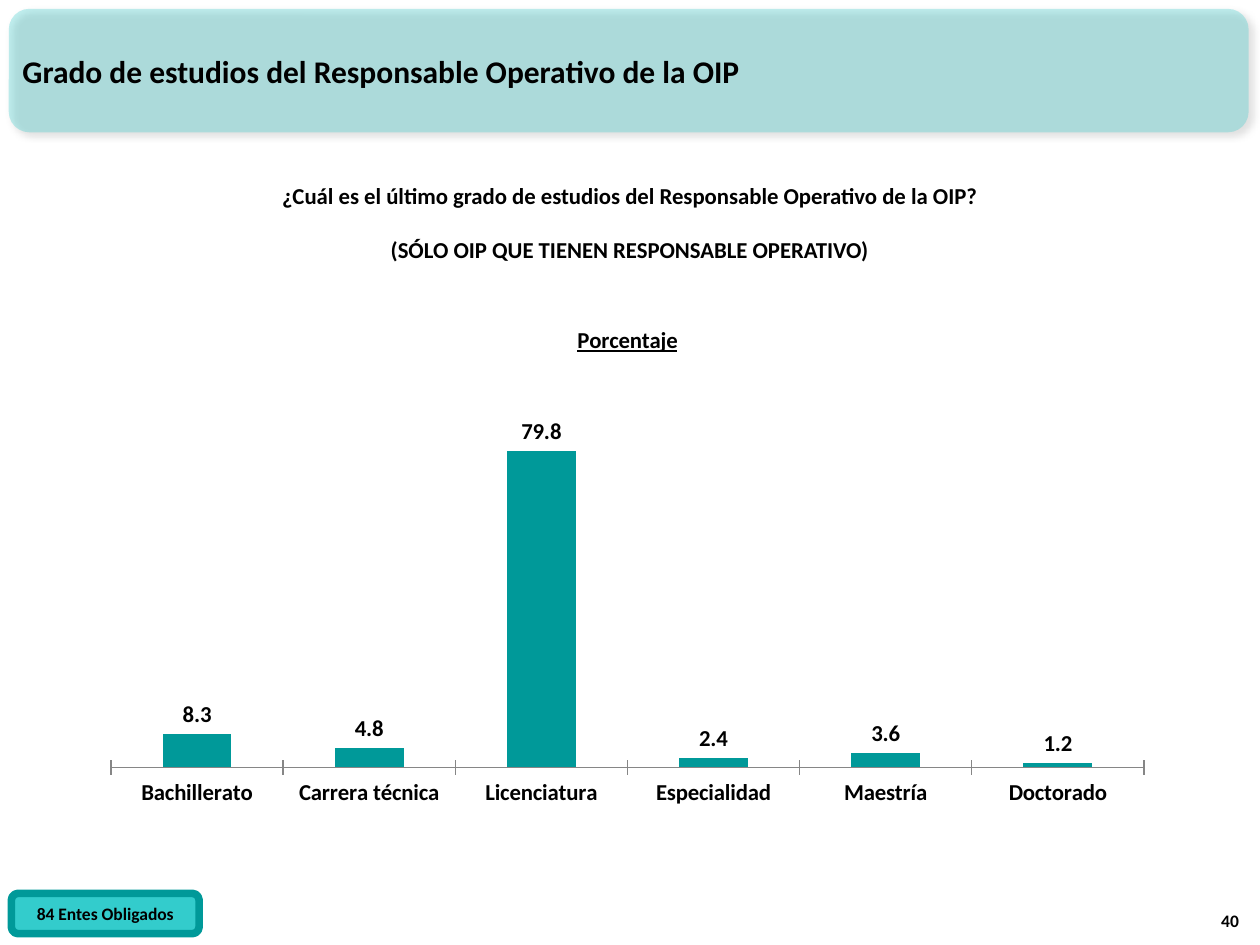
"""Builds the slide on the education level of the operative officers of the OIP."""
import lxml.etree
import pptx
import pptx.chart.data
import pptx.dml.color
import pptx.enum.chart
import pptx.enum.shapes
import pptx.enum.text
import pptx.oxml
import pptx.oxml.ns
import pptx.util

Inches = pptx.util.Inches
Pt = pptx.util.Pt
qn = pptx.oxml.ns.qn
Align = pptx.enum.text.PP_ALIGN
Anchor = pptx.enum.text.MSO_ANCHOR

TITLE = "Grado de estudios del Responsable Operativo de la OIP"
QUESTION = [
    "¿Cuál es el último grado de estudios del Responsable Operativo de la OIP?",
    "(SÓLO OIP QUE TIENEN RESPONSABLE OPERATIVO)",
]
MEASURE = "Porcentaje"
DEGREES = {
    "Bachillerato": 8.3,
    "Carrera técnica": 4.8,
    "Licenciatura": 79.8,
    "Especialidad": 2.4,
    "Maestría": 3.6,
    "Doctorado": 1.2,
}
SAMPLE = "84 Entes Obligados"
PAGE = "40"

THEME = {
    "font": "Calibri",
    "text": "000000",
    "teal": "009999",
    "aqua": "33CCCC",
    "axis": "868686",
    "title": 18,
    "body": 13,
    "small": 10,
}
PLOT = {"x": 0.02, "y": 0.13, "w": 0.96, "h": 0.77}


def color(key):
    return pptx.dml.color.RGBColor.from_string(THEME[key])


def style(font, size):
    font.name = THEME["font"]
    font.size = Pt(THEME[size])
    font.bold = True
    font.color.rgb = color("text")


def write(holder, lines, size, align, anchor, gap=0):
    frame = holder.text_frame
    frame.word_wrap = True
    frame.vertical_anchor = anchor
    for index, line in enumerate(lines):
        paragraph = frame.add_paragraph() if index else frame.paragraphs[0]
        paragraph.alignment = align
        if index:
            paragraph.space_before = Pt(gap)
        run = paragraph.add_run()
        run.text = line
        style(run.font, size)


def add_text(slide, box, *content, **options):
    write(slide.shapes.add_textbox(*map(Inches, box)), *content, **options)


def add_panel(slide, box):
    panel = slide.shapes.add_shape(
        pptx.enum.shapes.MSO_SHAPE.ROUNDED_RECTANGLE, *map(Inches, box))
    panel.shadow.inherit = False
    panel.fill.solid()
    panel.fill.fore_color.rgb = color("aqua")
    return panel


def add_banner(slide):
    banner = add_panel(slide, (0.07, 0.07, 9.84, 0.98))
    banner.line.fill.background()
    properties = banner.element.spPr
    fill = properties.find(qn("a:solidFill")).find(qn("a:srgbClr"))
    lxml.etree.SubElement(fill, qn("a:alpha"), val="30000")
    shadow = lxml.etree.SubElement(
        properties.find(qn("a:effectLst")), qn("a:outerShdw"),
        blurRad=str(Pt(4)), dist=str(Pt(3)), dir="2700000",
        algn="tl", rotWithShape="0")
    shade = lxml.etree.SubElement(shadow, qn("a:srgbClr"), val=THEME["text"])
    lxml.etree.SubElement(shade, qn("a:alpha"), val="40000")


def place_plot(chart):
    area = chart.element.find(".//" + qn("c:plotArea"))
    for layout in area.findall(qn("c:layout")):
        area.remove(layout)
    layout = pptx.oxml.parse_xml(
        f"<c:layout {pptx.oxml.ns.nsdecls('c')}><c:manualLayout/></c:layout>")
    manual = layout[0]
    settings = {"layoutTarget": "inner", "xMode": "edge", "yMode": "edge", **PLOT}
    for tag, value in settings.items():
        lxml.etree.SubElement(manual, qn(f"c:{tag}"), val=str(value))
    area.insert(0, layout)


def add_degrees(slide):
    data = pptx.chart.data.CategoryChartData(number_format="#,##0.0")
    data.categories = list(DEGREES)
    data.add_series(MEASURE, list(DEGREES.values()))
    chart = slide.shapes.add_chart(
        pptx.enum.chart.XL_CHART_TYPE.COLUMN_CLUSTERED,
        *map(Inches, (0.71, 2.41, 8.54, 4.09)), data).chart
    style(chart.font, "body")
    chart.has_legend = False
    chart.has_title = True
    heading = chart.chart_title.text_frame.paragraphs[0].add_run()
    heading.text = MEASURE
    style(heading.font, "body")
    heading.font.underline = True

    scale = chart.value_axis
    scale.minimum_scale, scale.maximum_scale, scale.major_unit = 0, 100, 10
    scale.has_major_gridlines = False
    scale.visible = False
    degrees = chart.category_axis
    degrees.major_tick_mark = pptx.enum.chart.XL_TICK_MARK.CROSS
    degrees.format.line.color.rgb = color("axis")
    degrees.format.line.width = Pt(0.75)

    columns = chart.plots[0]
    columns.vary_by_categories = False
    columns.gap_width = 150
    columns.overlap = -25
    share = columns.series[0]
    share.format.fill.solid()
    share.format.fill.fore_color.rgb = color("teal")
    labels = share.data_labels
    labels.show_value = True
    labels.number_format = "#,##0.0"
    labels.number_format_is_linked = False
    labels.position = pptx.enum.chart.XL_LABEL_POSITION.OUTSIDE_END
    style(labels.font, "body")
    place_plot(chart)


def add_sample(slide):
    sample = add_panel(slide, (0.09, 7.09, 1.49, 0.32))
    sample.line.color.rgb = color("teal")
    sample.line.width = Pt(4.33)
    write(sample, [SAMPLE], "small", Align.CENTER, Anchor.MIDDLE)


def main():
    deck = pptx.Presentation()
    deck.slide_width, deck.slide_height = Inches(10), Inches(7.5)
    slide = deck.slides.add_slide(deck.slide_layouts[6])
    add_banner(slide)
    add_text(slide, (9.45, 7.04, 0.48, 0.4), [PAGE], "small",
             Align.RIGHT, Anchor.BOTTOM)
    add_text(slide, (0.08, 0.09, 9.29, 0.94), [TITLE], "title",
             Align.LEFT, Anchor.MIDDLE)
    add_text(slide, (0.38, 1.39, 9.23, 0.76), QUESTION, "body",
             Align.CENTER, Anchor.TOP, gap=15.6)
    add_degrees(slide)
    add_sample(slide)
    deck.save("out.pptx")


if __name__ == "__main__":
    main()
